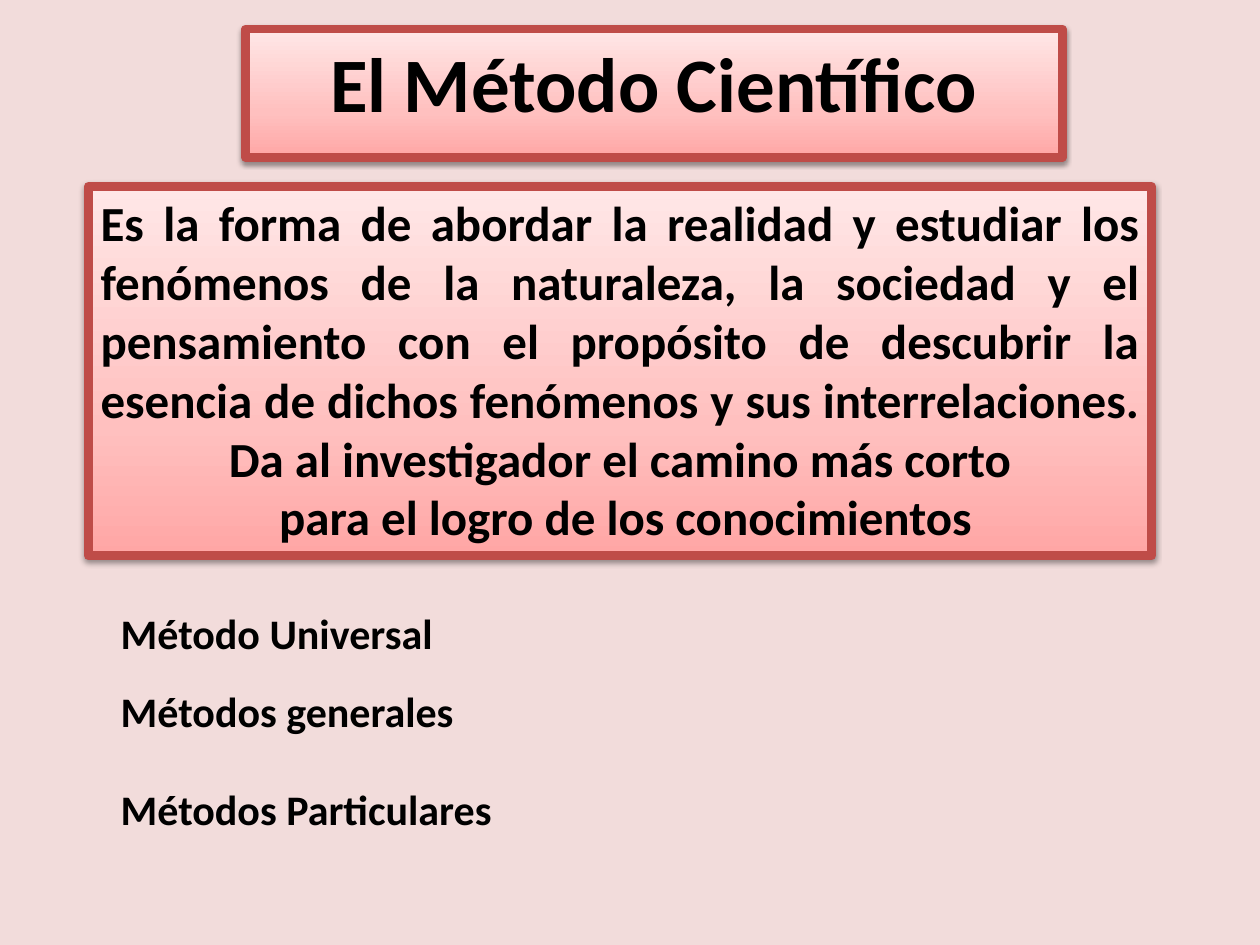
import pptx
import pptx.dml.color
import pptx.enum.shapes
import pptx.enum.text
import pptx.oxml
import pptx.oxml.ns
import pptx.util

Pt = pptx.util.Pt
RGBColor = pptx.dml.color.RGBColor
ALIGN = pptx.enum.text.PP_ALIGN
AUTO = pptx.enum.text.MSO_AUTO_SIZE

BACKGROUND = RGBColor(0xF2, 0xDC, 0xDB)
BORDER = RGBColor(0xBF, 0x4C, 0x48)
BLACK = RGBColor(0, 0, 0)
PANEL_STOPS = [
    (0, RGBColor(0xFF, 0xA6, 0xA5)),
    (35, RGBColor(0xFF, 0xC0, 0xBF)),
    (100, RGBColor(0xFF, 0xE7, 0xE7)),
]

DEFINITION = [
    ("Es la forma de abordar la realidad y estudiar los fenómenos de la "
     "naturaleza, la sociedad y el pensamiento con el propósito de descubrir "
     "la esencia de dichos fenómenos y sus interrelaciones. ", ALIGN.JUSTIFY),
    ("Da al investigador el camino más corto", ALIGN.CENTER),
    (" para el logro de los conocimientos", ALIGN.CENTER),
]
METHODS = [
    ("Método Universal", 343.5, 225.4),
    ("Métodos generales", 388.1, 219.6),
    ("Métodos Particulares", 444.2, 230.4),
]


def add_text(tf, text, size, align=ALIGN.LEFT, first=True):
    p = tf.paragraphs[0] if first else tf.add_paragraph()
    p.alignment = align
    r = p.add_run()
    r.text = text
    r.font.name = "Calibri"
    r.font.size = Pt(size)
    r.font.bold = True
    r.font.color.rgb = BLACK


def set_up_frame(sp, auto_size):
    tf = sp.text_frame
    tf.word_wrap = True
    tf.auto_size = auto_size
    tf.vertical_anchor = pptx.enum.text.MSO_ANCHOR.TOP
    return tf


def format_panel(sp):
    """Give a shape the upward gradient, thick border and soft shadow."""
    ns = pptx.oxml.ns.nsdecls("a")
    stops = "".join(
        f'<a:gs pos="{pos * 1000}"><a:srgbClr val="{color}"/></a:gs>'
        for pos, color in PANEL_STOPS)
    sp_pr = sp._element.spPr
    sp_pr.append(pptx.oxml.parse_xml(
        f'<a:gradFill {ns} rotWithShape="1"><a:gsLst>{stops}</a:gsLst>'
        '<a:lin ang="16200000" scaled="0"/></a:gradFill>'))
    sp.line.color.rgb = BORDER
    sp.line.width = Pt(5)
    sp_pr.append(pptx.oxml.parse_xml(
        f'<a:effectLst {ns}><a:outerShdw blurRad="{Pt(3.1)}" '
        f'dist="{Pt(1.6)}" dir="5400000" rotWithShape="0">'
        '<a:srgbClr val="000000"><a:alpha val="38000"/></a:srgbClr>'
        '</a:outerShdw></a:effectLst>'))


def add_title(s, text):
    sp = s.shapes.title
    sp.left, sp.top, sp.width, sp.height = Pt(140.4), Pt(16.6), Pt(466.6), Pt(73.4)
    format_panel(sp)
    add_text(set_up_frame(sp, AUTO.NONE), text, 44, ALIGN.CENTER)


def add_definition(s, paragraphs):
    sp = s.shapes.add_shape(pptx.enum.shapes.MSO_SHAPE.RECTANGLE,
                            Pt(50.4), Pt(106.6), Pt(607.7), Pt(211))
    format_panel(sp)
    tf = set_up_frame(sp, AUTO.SHAPE_TO_FIT_TEXT)
    for i, (text, align) in enumerate(paragraphs):
        add_text(tf, text, 28, align, first=i == 0)


def add_label(s, text, top, width):
    sp = s.shapes.add_textbox(Pt(61.9), Pt(top), Pt(width), Pt(36))
    add_text(set_up_frame(sp, AUTO.SHAPE_TO_FIT_TEXT), text, 24)


def main():
    prs = pptx.Presentation()
    prs.slide_width, prs.slide_height = Pt(720), Pt(540)
    s = prs.slides.add_slide(prs.slide_layouts[5])
    s.background.fill.solid()
    s.background.fill.fore_color.rgb = BACKGROUND

    # Title and definition panels
    add_title(s, "El Método Científico")
    add_definition(s, DEFINITION)

    # Kinds of method
    for text, top, width in METHODS:
        add_label(s, text, top, width)

    prs.save("out.pptx")


if __name__ == "__main__":
    main()
